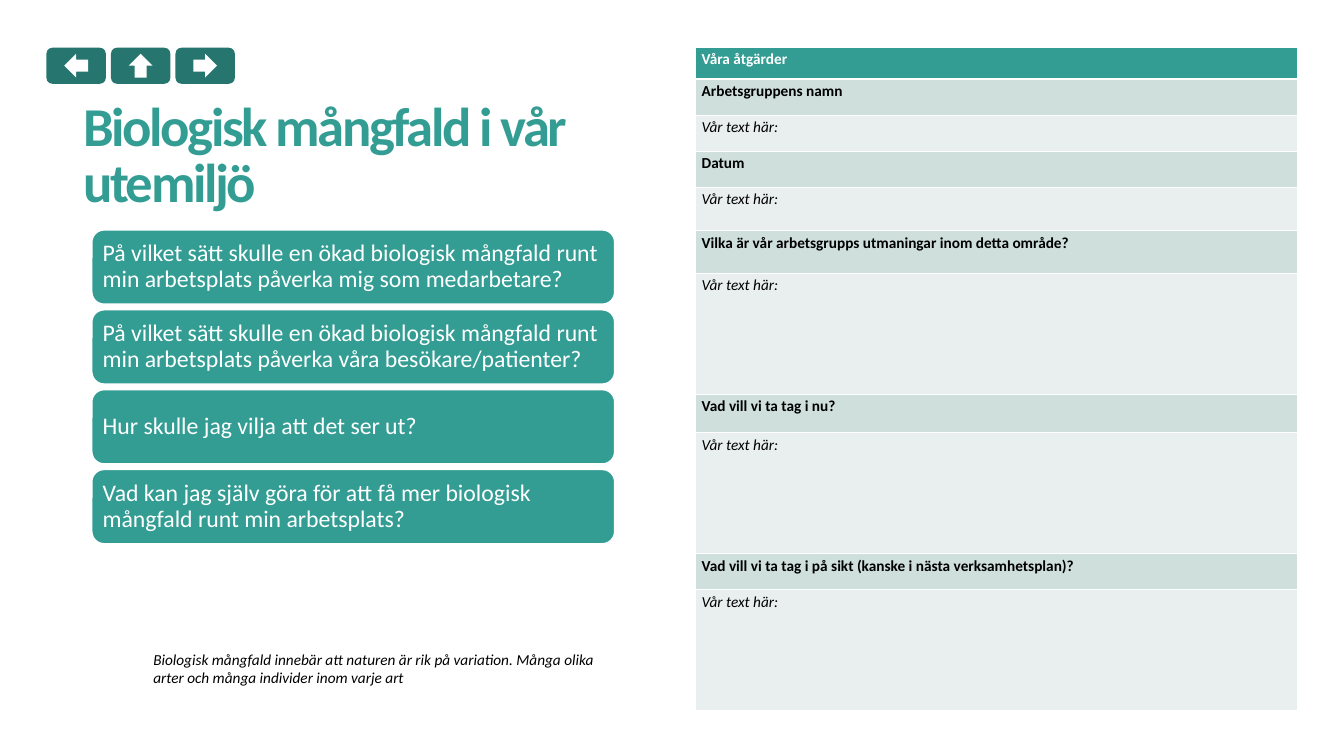
from pptx import Presentation
from pptx.dml.color import RGBColor
from pptx.enum.shapes import MSO_SHAPE
from pptx.enum.text import MSO_ANCHOR
from pptx.oxml import parse_xml
from pptx.oxml.ns import nsdecls
from pptx.util import Pt

TEAL = RGBColor(0x33, 0x9D, 0x94)
DARK_TEAL = RGBColor(0x26, 0x76, 0x6F)
HEADING_GREY = RGBColor(0xCE, 0xDF, 0xDC)
ANSWER_GREY = RGBColor(0xE8, 0xEF, 0xEE)
WHITE = RGBColor(0xFF, 0xFF, 0xFF)
BLACK = RGBColor(0, 0, 0)

QUESTIONS = [
    "På vilket sätt skulle en ökad biologisk mångfald runt min arbetsplats påverka mig som medarbetare?",
    "På vilket sätt skulle en ökad biologisk mångfald runt min arbetsplats påverka våra besökare/patienter?",
    "Hur skulle jag vilja att det ser ut?",
    "Vad kan jag själv göra för att få mer biologisk mångfald runt min arbetsplats?",
]
ANSWER = "Vår text här:"
# Heading, heading height, answer height
SECTIONS = [
    ("Arbetsgruppens namn", 42.48, 42.48),
    ("Datum", 42.48, 51.12),
    ("Vilka är vår arbetsgrupps utmaningar inom detta område?", 50.4, 142.56),
    ("Vad vill vi ta tag i nu?", 45.36, 142.56),
    ("Vad vill vi ta tag i på sikt (kanske i nästa verksamhetsplan)?", 42.48, 142.56),
]


def write_text(frame, text, size=18, color=BLACK, bold=False, italic=False,
               line_spacing=None, tracking=None, anchor=None, margins=None):
    frame.word_wrap = True
    if anchor is not None:
        frame.vertical_anchor = anchor
    if margins:
        (frame.margin_left, frame.margin_top,
         frame.margin_right, frame.margin_bottom) = [Pt(m) for m in margins]
    paragraph = frame.paragraphs[0]
    if line_spacing:
        paragraph.line_spacing = line_spacing
    run = paragraph.add_run()
    run.text = text
    font = run.font
    font.name, font.size, font.bold, font.italic = "Calibri", Pt(size), bold, italic
    font.color.rgb = color
    if tracking:
        run._r.get_or_add_rPr().set("spc", str(round(tracking * 100)))


def add_text(slide, text, left, top, width, height, **text_format):
    box = slide.shapes.add_textbox(Pt(left), Pt(top), Pt(width), Pt(height))
    write_text(box.text_frame, text, **text_format)


def add_block(slide, kind, left, top, width, height, fill, rotation=0):
    shape = slide.shapes.add_shape(kind, Pt(left), Pt(top), Pt(width), Pt(height))
    shape.shadow.inherit = False
    shape.fill.solid()
    shape.fill.fore_color.rgb = fill
    shape.line.fill.background()
    shape.rotation = rotation
    return shape


def add_navigation_button(slide, left, rotation):
    add_block(slide, MSO_SHAPE.ROUNDED_RECTANGLE, left, 56.2, 70, 42.5, DARK_TEAL)
    add_block(slide, MSO_SHAPE.RIGHT_ARROW, left + 21, 63.4, 28, 28, WHITE, rotation)


def add_question(slide, text, top):
    card = add_block(slide, MSO_SHAPE.ROUNDED_RECTANGLE, 108, top, 616.3, 87.84, TEAL)
    card.line.color.rgb = WHITE
    card.line.width = Pt(2)
    paragraph = card.text_frame.paragraphs[0]
    paragraph.alignment = 1
    write_text(card.text_frame, text, size=28, color=WHITE, line_spacing=0.9,
               anchor=MSO_ANCHOR.MIDDLE, margins=[8.64] * 4)


def set_borders(cell, top, bottom):
    properties = cell._tc.get_or_add_tcPr()
    for side, width in (("L", 1), ("R", 1), ("T", top), ("B", bottom)):
        properties.append(parse_xml(
            f'<a:ln{side} {nsdecls("a")} w="{Pt(width)}"><a:solidFill>'
            f'<a:srgbClr val="{WHITE}"/></a:solidFill></a:ln{side}>'))


def add_action_table(slide):
    rows = [("Våra åtgärder", 37.44, TEAL, dict(color=WHITE, bold=True))]
    for heading, heading_height, answer_height in SECTIONS:
        rows.append((heading, heading_height, HEADING_GREY, dict(bold=True)))
        rows.append((ANSWER, answer_height, ANSWER_GREY, dict(italic=True)))
    total = sum(row[1] for row in rows)
    table = slide.shapes.add_table(len(rows), 1, Pt(819.4), Pt(55.6),
                                   Pt(709.2), Pt(total)).table
    for index, (text, height, fill, text_format) in enumerate(rows):
        table.rows[index].height = Pt(height)
        cell = table.cell(index, 0)
        set_borders(cell, top=3 if index == 1 else 1, bottom=3 if index == 0 else 1)
        cell.fill.solid()
        cell.fill.fore_color.rgb = fill
        write_text(cell.text_frame, text, **text_format)


def main():
    presentation = Presentation()
    presentation.slide_width, presentation.slide_height = Pt(1583.28), Pt(890.64)
    slide = presentation.slides.add_slide(presentation.slide_layouts[6])

    # Questions
    for index, question in enumerate(QUESTIONS):
        add_question(slide, question, 270.7 + index * 94.08)

    # Title and definition
    add_text(slide, "Biologisk mångfald i vår utemiljö", 97.9, 96.5, 616.3, 160.5,
             size=64.5, color=TEAL, bold=True, line_spacing=0.85, tracking=-2.8,
             anchor=MSO_ANCHOR.BOTTOM, margins=(0, 0, 0, 5.76))
    add_text(slide, "Biologisk mångfald innebär att naturen är rik på variation. "
             "Många olika arter och många individer inom varje art",
             173.5, 762.5, 561.6, 51.1, italic=True)

    # Navigation: back, up, forward
    for index, rotation in enumerate((180, 270, 0)):
        add_navigation_button(slide, 54.7 + index * 76, rotation)

    # Actions
    add_action_table(slide)
    presentation.save("out.pptx")


if __name__ == "__main__":
    main()
